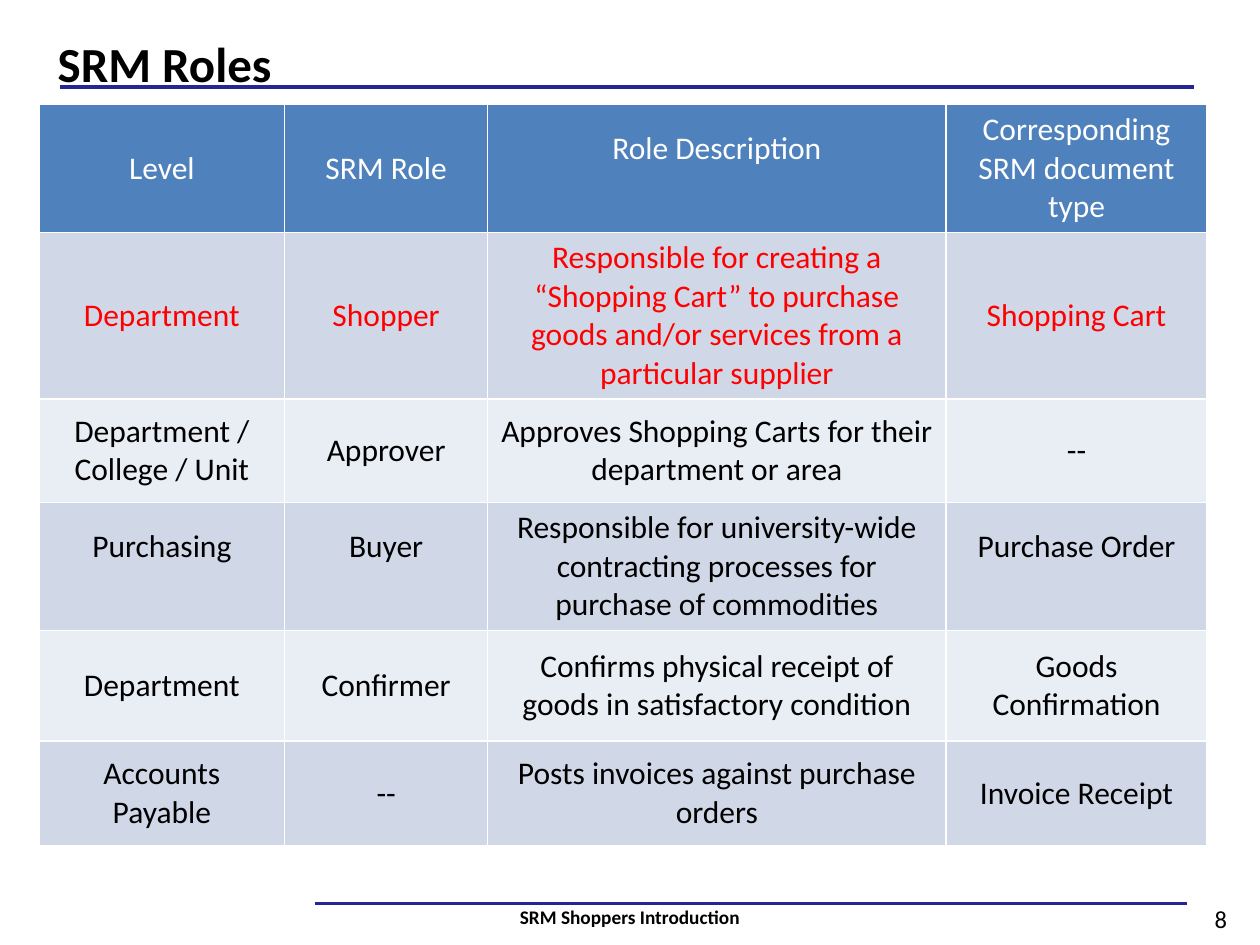
import lxml.etree
import pptx
import pptx.dml.color
import pptx.enum.shapes
import pptx.enum.text
import pptx.oxml.ns
import pptx.util

Inches = pptx.util.Inches
Pt = pptx.util.Pt
ALIGN = pptx.enum.text.PP_ALIGN
MIDDLE = pptx.enum.text.MSO_ANCHOR.MIDDLE
qn = pptx.oxml.ns.qn

COLORS = {
    "black": "000000", "white": "FFFFFF", "red": "FF0000", "rule": "252595",
    "header": "4F81BD", "dark_band": "D0D8E8", "light_band": "E9EDF4",
}
ROLES = [
    ("Level", "SRM Role", "Role Description", "Corresponding SRM document type"),
    ("Department", "Shopper",
     "Responsible for creating a “Shopping Cart” to purchase goods and/or services "
     "from a particular supplier", "Shopping Cart"),
    ("Department / College / Unit", "Approver",
     "Approves Shopping Carts for their department or area", "--"),
    ("Purchasing", "Buyer",
     "Responsible for university-wide contracting processes for purchase of commodities",
     "Purchase Order"),
    ("Department", "Confirmer",
     "Confirms physical receipt of goods in satisfactory condition", "Goods Confirmation"),
    ("Accounts Payable", "--", "Posts invoices against purchase orders", "Invoice Receipt"),
]
COLUMN_WIDTHS = [1.95, 1.61, 3.64, 2.07]
ROW_HEIGHTS = [0.98, 1.27, 0.82, 0.95, 0.88, 0.83]
RAISED_CELLS = {(0, 2), (3, 0), (3, 1), (3, 3)}
RULES = [(0.48, 9.48, 0.69, 2.25), (2.5, 9.42, 7.17, 1.5)]
TEXT_BOXES = [
    ("SRM Roles", (0.36, 0.1, 9.14, 0.8), dict(size=28, bold=True, align=ALIGN.LEFT)),
    ("SRM Shoppers Introduction", (2.01, 7.08, 5.98, 0.4), dict(size=11, bold=True)),
    ("8", (9.39, 7.09, 0.6, 0.4), dict(size=14)),
]


def rgb(name):
    return pptx.dml.color.RGBColor.from_string(COLORS[name])


def write_text(text_frame, text, size=18, color="black", bold=False, align=ALIGN.CENTER):
    text_frame.word_wrap = True
    paragraph = text_frame.paragraphs[0]
    paragraph.alignment = align
    run = paragraph.add_run()
    run.text = text
    run.font.name = "Calibri"
    run.font.size = Pt(size)
    run.font.bold = bold
    run.font.color.rgb = rgb(color)


def add_rule(slide, left, right, top, width):
    rule = slide.shapes.add_connector(
        pptx.enum.shapes.MSO_CONNECTOR.STRAIGHT,
        Inches(left), Inches(top), Inches(right), Inches(top))
    rule.line.color.rgb = rgb("rule")
    rule.line.width = Pt(width)
    lxml.etree.SubElement(rule._element.spPr, qn("a:effectLst"))


def add_borders(cell):
    properties = cell._tc.get_or_add_tcPr()
    for side in ("a:lnL", "a:lnR", "a:lnT", "a:lnB"):
        line = lxml.etree.SubElement(properties, qn(side), w=str(Pt(1)))
        fill = lxml.etree.SubElement(line, qn("a:solidFill"))
        lxml.etree.SubElement(fill, qn("a:srgbClr"), val=COLORS["white"])


def add_role_table(slide):
    table = slide.shapes.add_table(
        len(ROLES), len(COLUMN_WIDTHS), Inches(0.31), Inches(0.83),
        Inches(sum(COLUMN_WIDTHS)), Inches(sum(ROW_HEIGHTS))).table
    for column, width in zip(table.columns, COLUMN_WIDTHS):
        column.width = Inches(width)
    for row, height in zip(table.rows, ROW_HEIGHTS):
        row.height = Inches(height)
    text_colors = {0: "white", 1: "red"}
    for row_index, values in enumerate(ROLES):
        band = "dark_band" if row_index % 2 else "light_band"
        for column_index, text in enumerate(values):
            cell = table.cell(row_index, column_index)
            add_borders(cell)
            cell.fill.solid()
            cell.fill.fore_color.rgb = rgb(band if row_index else "header")
            cell.vertical_anchor = MIDDLE
            if (row_index, column_index) in RAISED_CELLS:
                cell.margin_bottom = Inches(0.36)
            write_text(cell.text_frame, text, color=text_colors.get(row_index, "black"))


def main():
    presentation = pptx.Presentation()
    presentation.slide_width = Inches(10)
    presentation.slide_height = Inches(7.5)
    slide = presentation.slides.add_slide(presentation.slide_layouts[6])
    for rule in RULES:
        add_rule(slide, *rule)
    add_role_table(slide)
    for text, place, style in TEXT_BOXES:
        text_box = slide.shapes.add_textbox(*map(Inches, place))
        text_box.text_frame.vertical_anchor = MIDDLE
        write_text(text_box.text_frame, text, **style)
    presentation.save("out.pptx")


if __name__ == "__main__":
    main()
